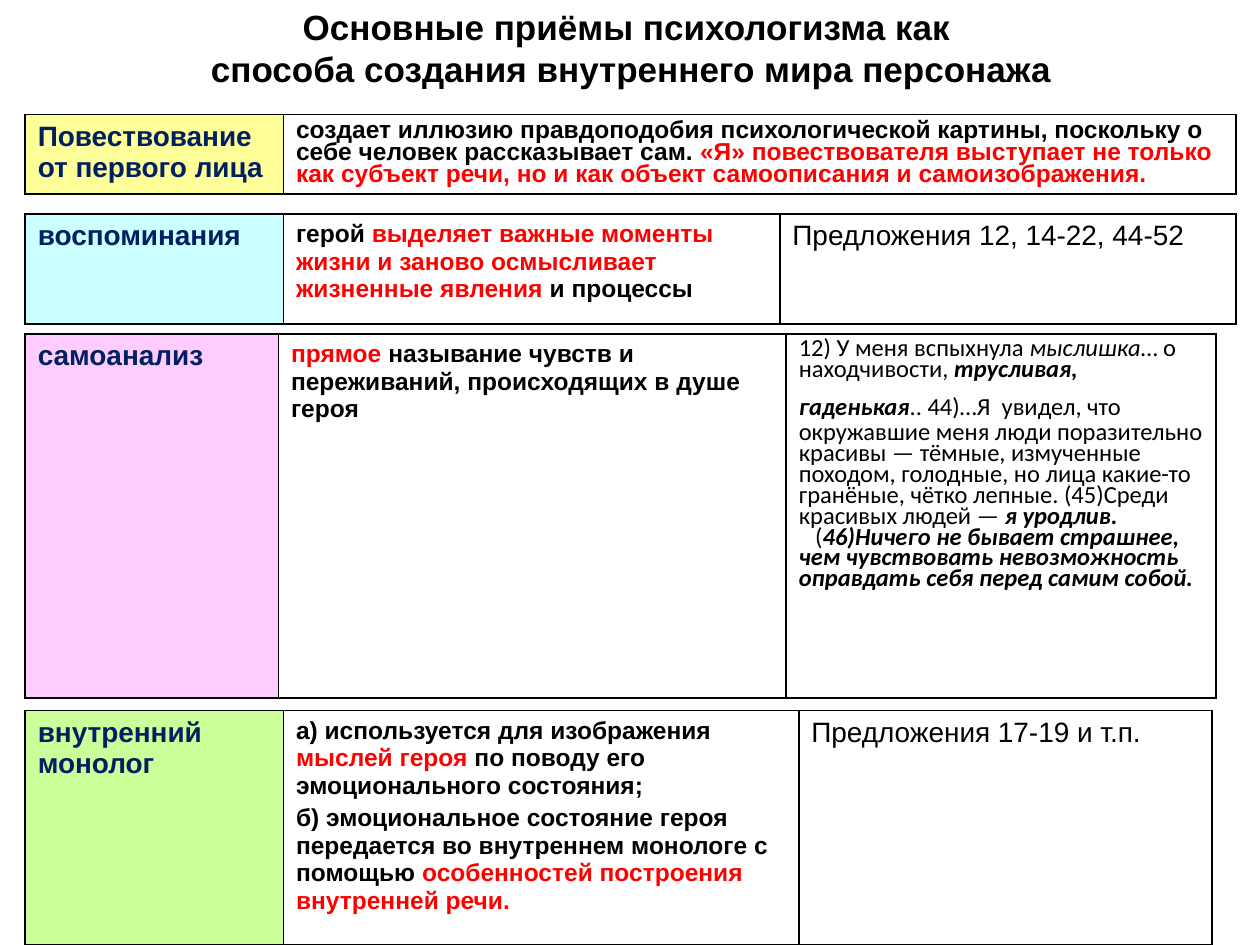
from lxml import etree
from pptx import Presentation
from pptx.dml.color import RGBColor
from pptx.enum.text import MSO_ANCHOR, MSO_AUTO_SIZE, PP_ALIGN
from pptx.oxml.ns import qn
from pptx.util import Inches, Pt

CENTER = PP_ALIGN.CENTER
MIDDLE = MSO_ANCHOR.MIDDLE
FIXED = MSO_AUTO_SIZE.NONE

THEME = {
    "font": "Arial", "quote": "Calibri",
    "ink": "000000", "navy": "002060", "red": "FF0000",
    "head": 20, "label": 16, "body": 14, "gap": 28, "line": 1,
}
RED = {"color": THEME["red"]}
STRONG = {"bold": True, "italic": True}
SLANT = {"italic": True}
LABEL = {"size": THEME["label"], "color": THEME["navy"], "bold": True}
BODY = {"bold": True}
PLAIN = {"size": THEME["label"]}
TIGHT = {"bold": True, "lines": 0.8}
QUOTE = {"font": THEME["quote"], "lines": 0.7}

TITLE = "Основные приёмы психологизма как \nспособа создания внутреннего мира персонажа"
LEFT = 0.2

TABLES = [
    {"top": 0.91, "high": 0.63, "cols": [2.05, 7.56], "fill": "FFFF99", "cells": [
        (LABEL, [["Повествование от первого лица"]]),
        (TIGHT, [[
            "создает иллюзию правдоподобия психологической картины, поскольку о себе человек рассказывает сам. ",
            ("«Я» повествователя выступает не только как субъект речи, но и как объект самоописания и самоизображения.", RED),
        ]]),
    ]},
    {"top": 1.7, "high": 0.87, "cols": [2.05, 3.94, 3.62], "fill": "CCFFFF", "cells": [
        (LABEL, [["воспоминания"]]),
        (BODY, [[
            "герой ",
            ("выделяет важные моменты жизни и заново осмысливает жизненные явления ", RED),
            "и процессы",
        ]]),
        (PLAIN, [["Предложения 12, 14-22, 44-52"]]),
    ]},
    {"top": 2.65, "high": 2.89, "cols": [2.01, 4.03, 3.41], "fill": "FFCCFF", "cells": [
        (LABEL, [["самоанализ"]]),
        (BODY, [[
            ("прямое ", RED),
            "называние чувств и переживаний, происходящих в душе героя",
        ]]),
        (QUOTE, [
            [
                "12) У меня вспыхнула ", ("мыслишка", SLANT), "… о находчивости, ",
                ("трусливая, гаденькая", STRONG), ".. 44)…Я",
                (" ", {"size": THEME["gap"]}),
                "увидел, что окружавшие меня люди поразительно красивы — тёмные, измученные походом, "
                "голодные, но лица какие-то гранёные, чётко лепные. (45)Среди красивых людей — ",
                ("я уродлив.", STRONG),
            ],
            [
                "(",
                ("46)Ничего не бывает страшнее, чем чувствовать невозможность "
                 "оправдать себя перед самим собой.", STRONG),
            ],
        ]),
    ]},
    {"top": 5.64, "high": 1.86, "cols": [2.05, 4.09, 3.28], "fill": "CCFF99", "cells": [
        (LABEL, [["внутренний монолог"]]),
        (BODY, [
            [
                "а) используется для изображения ", ("мыслей героя ", RED),
                "по поводу его эмоционального состояния;",
            ],
            [
                "б) эмоциональное состояние героя передается во внутреннем монологе с помощью ",
                ("особенностей построения внутренней речи.", RED),
            ],
        ]),
        (PLAIN, [["Предложения 17-19 и т.п."]]),
    ]},
]


def write(para, text, font=THEME["font"], size=THEME["body"],
          color=THEME["ink"], bold=False, italic=False):
    for i, part in enumerate(text.split("\n")):
        if i:
            para.add_line_break()
        run = para.add_run()
        run.text = part
        face = run.font
        face.name, face.size = font, Pt(size)
        face.bold, face.italic = bold, italic
        face.color.rgb = RGBColor.from_string(color)


def frame(cell):
    props = cell._tc.get_or_add_tcPr()
    for side in ("a:lnL", "a:lnR", "a:lnT", "a:lnB"):
        line = etree.SubElement(props, qn(side), w=str(Pt(THEME["line"])))
        fill = etree.SubElement(line, qn("a:solidFill"))
        etree.SubElement(fill, qn("a:srgbClr"), val=THEME["ink"])


def fill_text(cell, look, paras):
    look = dict(look)
    lines = look.pop("lines", None)
    size = look.get("size", THEME["body"])
    body = cell.text_frame
    for i, runs in enumerate(paras):
        para = body.add_paragraph() if i else body.paragraphs[0]
        para.space_before = Pt(size * 0.2)
        if lines:
            para.line_spacing = lines
        if i and look.get("font") == THEME["quote"]:
            para.space_before = Pt(0)
            para._p.get_or_add_pPr().set("indent", str(Inches(0.13)))
        for run in runs:
            text, extra = (run, {}) if isinstance(run, str) else run
            write(para, text, **{**look, **extra})


def add_grid(slide, data):
    cols = data["cols"]
    grid = slide.shapes.add_table(
        1, len(cols), Inches(LEFT), Inches(data["top"]),
        Inches(sum(cols)), Inches(data["high"])).table
    grid.first_row = grid.horz_banding = False
    for i, (wide, (look, paras)) in enumerate(zip(cols, data["cells"])):
        grid.columns[i].width = Inches(wide)
        cell = grid.cell(0, i)
        frame(cell)
        if i:
            cell.fill.background()
        else:
            cell.fill.solid()
            cell.fill.fore_color.rgb = RGBColor.from_string(data["fill"])
        fill_text(cell, look, paras)


def main():
    deck = Presentation()
    deck.slide_width, deck.slide_height = Inches(10), Inches(7.5)
    slide = deck.slides.add_slide(deck.slide_layouts[5])
    title = slide.shapes.title
    title.left, title.top = Inches(0.51), Inches(0)
    title.width, title.height = Inches(9), Inches(0.76)
    body = title.text_frame
    body.auto_size, body.vertical_anchor = FIXED, MIDDLE
    para = body.paragraphs[0]
    para.alignment = CENTER
    write(para, TITLE, size=THEME["head"], bold=True)
    for data in TABLES:
        add_grid(slide, data)
    deck.save("out.pptx")


if __name__ == "__main__":
    main()
